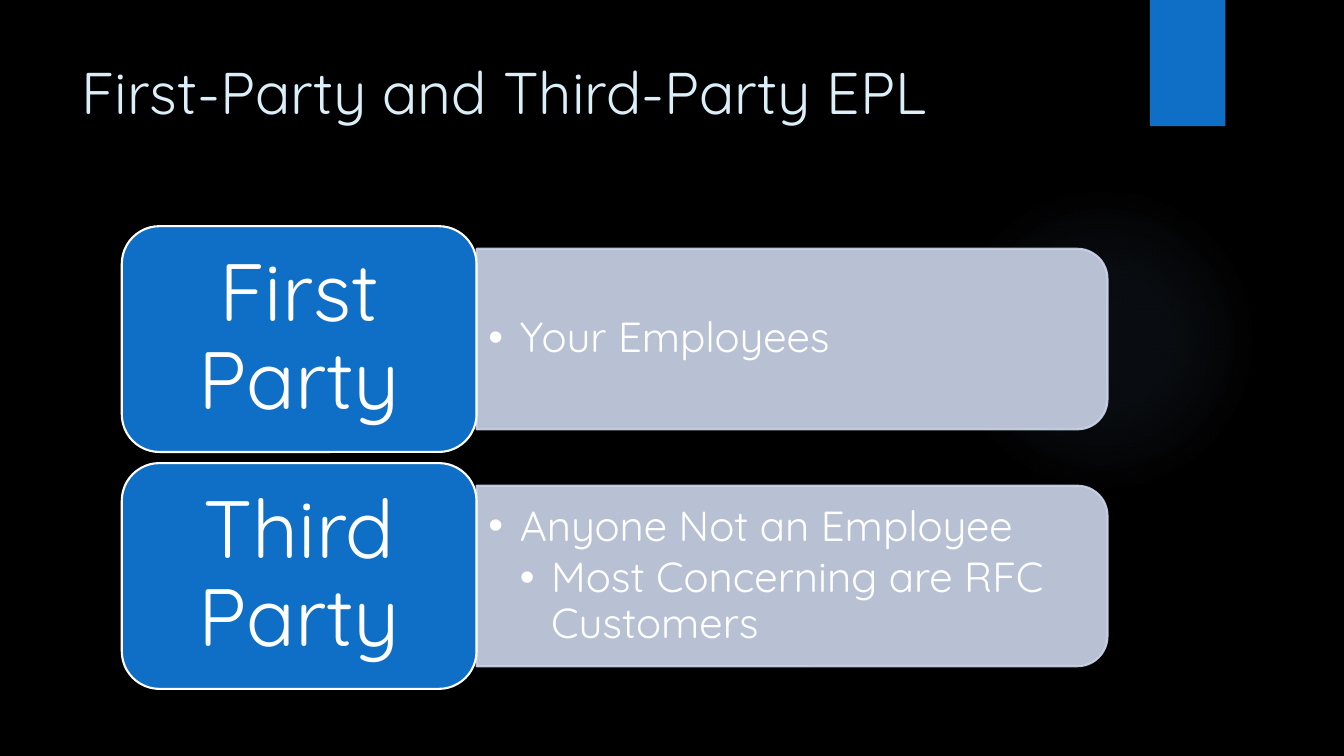
from lxml import etree
from pptx import Presentation
from pptx import util as u
from pptx.dml import color
from pptx.enum import shapes, text
from pptx.oxml import ns, xmlchemy

FONT = "Quicksand"
BLUE = "0F6FC6"
PANEL = "CCD5EA"
WHITE = "FFFFFF"
INDENT = 0.79
PARTIES = [
    ("First Party", ["Your Employees"]),
    ("Third Party", ["Anyone Not an Employee", "Most Concerning are RFC Customers"]),
]


def rgb(value):
    return color.RGBColor.from_string(value)


def apply_format(target, values):
    for name, value in values.items():
        setattr(target, name, value)


def place(shape, left, top, width, height):
    apply_format(shape, {"left": u.Cm(left), "top": u.Cm(top),
                         "width": u.Cm(width), "height": u.Cm(height)})


def format_frame(frame, anchor, side, end):
    apply_format(frame, {
        "word_wrap": True, "auto_size": text.MSO_AUTO_SIZE.NONE, "vertical_anchor": anchor,
        "margin_left": u.Cm(side), "margin_right": u.Cm(side),
        "margin_top": u.Cm(end), "margin_bottom": u.Cm(end)})


def write(paragraph, words, size, fill, align, spacing=1.0, after=0):
    paragraph.text = words
    apply_format(paragraph, {"alignment": align, "line_spacing": spacing,
                             "space_before": u.Pt(0), "space_after": u.Pt(after)})
    apply_format(paragraph.font, {"name": FONT, "size": u.Pt(size), "bold": False})
    paragraph.font.color.rgb = rgb(fill)


def add_bullet(paragraph, level):
    paragraph.level = level
    properties = paragraph._p.get_or_add_pPr()
    properties.set("marL", str(u.Cm(INDENT * (level + 1))))
    properties.set("indent", str(-u.Cm(INDENT)))
    etree.SubElement(properties, ns.qn("a:buChar")).set("char", "•")


def set_alpha(fill, percent):
    solid_color = fill._xPr.find(ns.qn("a:solidFill"))[0]
    etree.SubElement(solid_color, ns.qn("a:alpha")).set("val", str(percent * 1000))


def add_block(slide, kind, box, fill, line=None):
    shape = slide.shapes.add_shape(kind, *map(u.Cm, box))
    shape.shadow.inherit = False
    shape.fill.solid()
    shape.fill.fore_color.rgb = rgb(fill)
    if line:
        shape.line.color.rgb = rgb(line)
        shape.line.width = u.Pt(1.5)
    else:
        shape.line.fill.background()
    return shape


def add_glow(slide, box):
    glow = add_block(slide, shapes.MSO_SHAPE.OVAL, box, "82B1E5")
    stops = "".join(
        f'<a:gs pos="{position * 1000}"><a:srgbClr val="82B1E5">'
        f'<a:alpha val="{alpha * 1000}"/></a:srgbClr></a:gs>'
        for position, alpha in [(0, 7), (36, 6), (69, 0)])
    gradient = etree.fromstring(
        f'<a:gradFill {ns.nsdecls("a")}><a:gsLst>{stops}</a:gsLst><a:path path="circle">'
        '<a:fillToRect l="50000" t="50000" r="50000" b="50000"/></a:path></a:gradFill>')
    properties = glow._element.spPr
    properties.replace(properties.find(ns.qn("a:solidFill")), gradient)


def add_background(slide):
    slide.background.fill.solid()
    slide.background.fill.fore_color.rgb = rgb("000000")
    add_glow(slide, (23.9, 4.65, 7.82, 7.82))
    add_block(slide, shapes.MSO_SHAPE.RECTANGLE, (28.98, 0, 1.9, 3.18), BLUE)


def fill_title(title, box):
    place(title, *box)
    format_frame(title.text_frame, text.MSO_ANCHOR.TOP, 0.25, 0.13)
    write(title.text_frame.paragraphs[0], "First-Party and Third-Party EPL", 42, "DBEFF9",
          text.PP_ALIGN.LEFT)


def add_panel(slide, left, middle, width, height):
    box = (left + (width - height) / 2, middle - width / 2, height, width)
    panel = add_block(slide, shapes.MSO_SHAPE.ROUND_2_SAME_RECTANGLE, box, PANEL, PANEL)
    panel.rotation = 90
    set_alpha(panel.fill, 90)
    set_alpha(panel.line.fill, 90)


def fill_list(slide, body, items, box):
    place(body, *box)
    slide.shapes._spTree.append(body._element)
    frame = body.text_frame
    format_frame(frame, text.MSO_ANCHOR.MIDDLE, 0.3, 0.15)
    for level, item in enumerate(items):
        paragraph = frame.add_paragraph() if level else frame.paragraphs[0]
        add_bullet(paragraph, level)
        write(paragraph, item, 30, WHITE, text.PP_ALIGN.LEFT, 0.9, 4.5)


def add_party(slide, body, name, items, box):
    left, top, width, height = box
    label_width = 8.94
    panel_left = left + label_width
    middle = top + height / 2
    add_panel(slide, panel_left, middle, width - label_width, 4.55)
    fill_list(slide, body, items, (panel_left, middle - 2.05, 15.67, 4.1))
    label = add_block(slide, shapes.MSO_SHAPE.ROUNDED_RECTANGLE,
                      (left, top, label_width, height), BLUE, WHITE)
    format_frame(label.text_frame, text.MSO_ANCHOR.MIDDLE, 0.61, 0.3)
    write(label.text_frame.paragraphs[0], name, 58, WHITE, text.PP_ALIGN.CENTER, 0.9)


def main():
    presentation = Presentation()
    presentation.slide_width = u.Cm(33.87)
    presentation.slide_height = u.Cm(19.05)
    slide = presentation.slides.add_slide(presentation.slide_layouts[3])
    title, *bodies = slide.placeholders
    add_background(slide)
    fill_title(title, (1.8, 1.27, 26.14, 3.89))
    for row, (body, (name, items)) in enumerate(zip(bodies, PARTIES)):
        add_party(slide, body, name, items, (3.07, 5.7 + row * 5.97, 24.84, 5.69))
    presentation.save("out.pptx")


if __name__ == "__main__":
    main()
